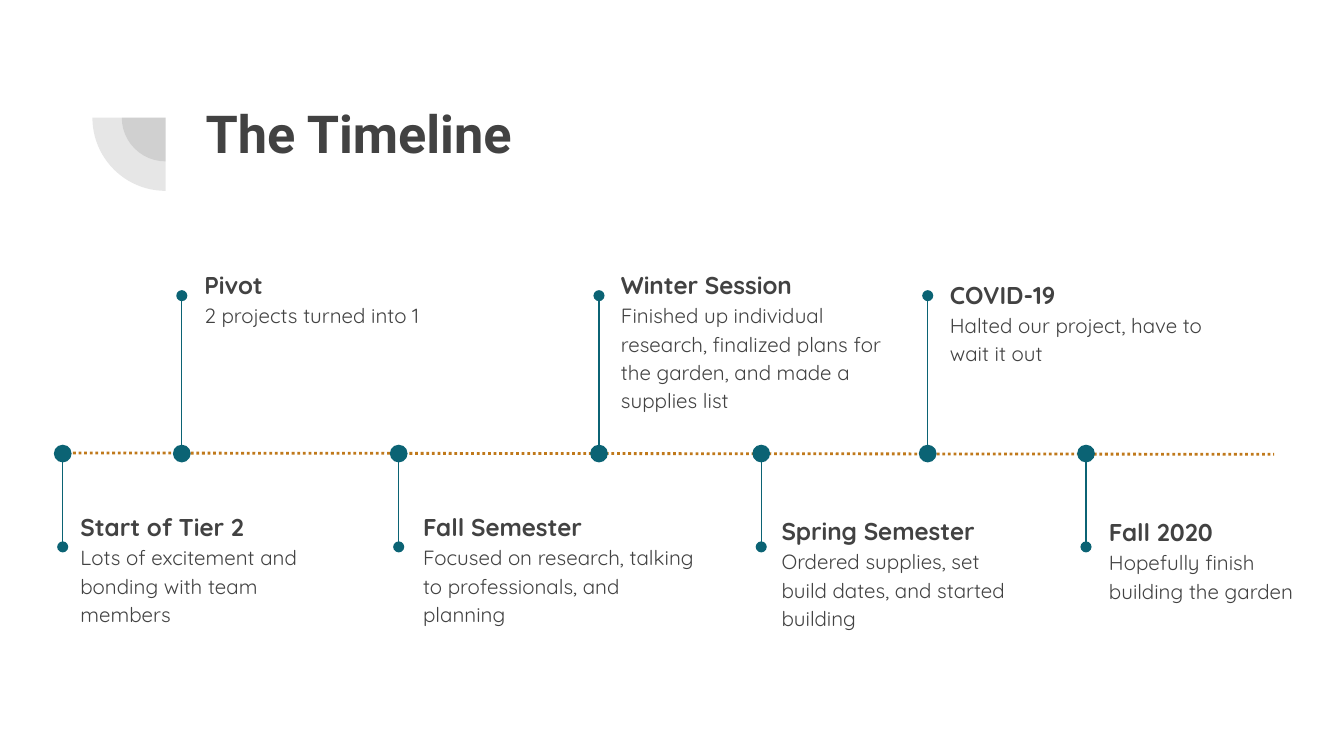
"""Build a project timeline slide with alternating milestones."""
from dataclasses import dataclass

from lxml.etree import SubElement
from pptx import Presentation
from pptx.dml.color import RGBColor
from pptx.enum.dml import MSO_LINE
from pptx.enum.shapes import MSO_CONNECTOR, MSO_SHAPE
from pptx.oxml.ns import qn
from pptx.util import Pt


@dataclass(frozen=True)
class Theme:
    ink: RGBColor = RGBColor(0x42, 0x42, 0x42)
    teal: RGBColor = RGBColor(0x0B, 0x63, 0x74)
    ochre: RGBColor = RGBColor(0xC0, 0x79, 0x1B)
    title_font: str = "Roboto"
    body_font: str = "Quicksand"
    title_size: int = 28
    heading_size: int = 13
    detail_size: int = 11


theme = Theme()
presentation = Presentation()
presentation.slide_width, presentation.slide_height = Pt(720), Pt(405)
slide = presentation.slides.add_slide(presentation.slide_layouts[6])
shapes = slide.shapes


def add_line(x1, y1, x2, y2, color, width):
    connector = shapes.add_connector(MSO_CONNECTOR.STRAIGHT, Pt(x1), Pt(y1), Pt(x2), Pt(y2))
    connector.line.color.rgb = color
    connector.line.width = Pt(width)
    SubElement(connector._element.spPr, qn("a:effectLst"))
    return connector


def add_text(left, top, width, height, lines):
    frame = shapes.add_textbox(Pt(left), Pt(top), Pt(width), Pt(height)).text_frame
    frame.word_wrap = True
    frame.margin_left = frame.margin_right = frame.margin_top = frame.margin_bottom = Pt(7.2)
    frame.text = "\n".join(text for text, *_ in lines)
    for paragraph, (_, font_name, size, bold, spacing) in zip(frame.paragraphs, lines):
        paragraph.line_spacing = spacing
        font = paragraph.runs[0].font
        font.name, font.size, font.bold = font_name, Pt(size), bold
        font.color.rgb = theme.ink


for radius in (23.5, 39.25):
    quarter = shapes.add_shape(
        MSO_SHAPE.PIE, Pt(88.75 - radius), Pt(63 - radius), Pt(2 * radius), Pt(2 * radius))
    quarter.adjustments[0], quarter.adjustments[1] = 54, 108
    quarter.shadow.inherit = False
    quarter.fill.solid()
    quarter.fill.fore_color.rgb = theme.ink
    quarter.line.fill.background()
    tint = quarter._element.spPr.find(qn("a:solidFill"))[0]
    SubElement(tint, qn("a:alpha"), val="13000")

add_text(103, 46.8, 553.7, 78.5, [("The Timeline", theme.title_font, theme.title_size, True, 1.0)])

axis_y, dot_size, up_end, down_end = 243, 9.5, 158.4, 293
axis = add_line(33.1, 242.7, 682.6, 243.4, theme.ochre, 1.5)
axis.line.dash_style = MSO_LINE.ROUND_DOT

milestones = [
    (33.6, down_end, 36, 265, 160, "Start of Tier 2",
     "Lots of excitement and bonding with team members"),
    (97.4, up_end, 102.4, 135.4, 160, "Pivot", "2 projects turned into 1"),
    (213.6, down_end, 219.6, 265, 160, "Fall Semester",
     "Focused on research, talking to professionals, and planning"),
    (320.9, up_end, 325.6, 135.4, 160, "Winter Session",
     "Finished up individual research, finalized plans for the garden, and made a supplies list"),
    (407.8, down_end, 411.6, 267.2, 143.3, "Spring Semester",
     "Ordered supplies, set build dates, and started building"),
    (497, up_end, 501.8, 140.6, 160, "COVID-19", "Halted our project, have to wait it out"),
    (581.8, down_end, 587, 267.8, 133.2, "Fall 2020", "Hopefully finish building the garden"),
]
for x, stem_end, text_left, text_top, text_width, heading, detail in milestones:
    stem = add_line(x, axis_y, x, stem_end, theme.teal, 0.75)
    SubElement(stem.line._get_or_add_ln(), qn("a:tailEnd"), type="oval", w="med", len="med")

    dot = shapes.add_shape(
        MSO_SHAPE.OVAL, Pt(x - dot_size / 2), Pt(axis_y - dot_size / 2), Pt(dot_size), Pt(dot_size))
    dot.shadow.inherit = False
    dot.fill.solid()
    dot.fill.fore_color.rgb = theme.teal
    dot.line.fill.background()

    add_text(text_left, text_top, text_width, 78 if stem_end == up_end else 85.7, [
        (heading, theme.body_font, theme.heading_size, True, 1.15),
        (detail, theme.body_font, theme.detail_size, False, 1.15),
    ])

presentation.save("out.pptx")
